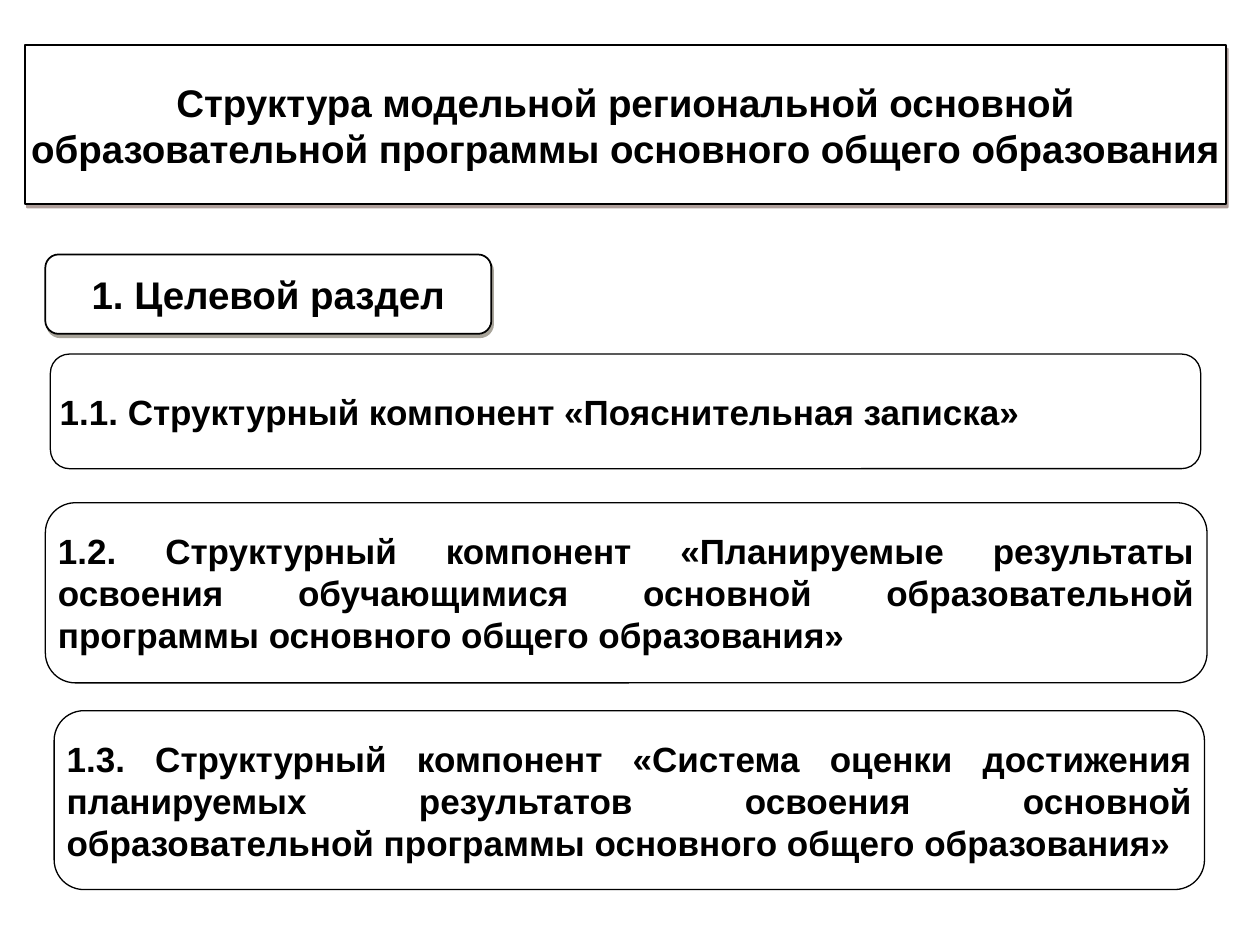
from lxml.etree import SubElement
from pptx import Presentation
from pptx.dml.color import RGBColor
from pptx.enum.shapes import MSO_SHAPE
from pptx.enum.text import MSO_ANCHOR, MSO_AUTO_SIZE, PP_ALIGN
from pptx.oxml import parse_xml
from pptx.oxml.ns import nsdecls, qn
from pptx.util import Inches, Pt

TITLE = ("Структура модельной региональной основной образовательной "
         "программы основного общего образования")
SECTION = "1. Целевой раздел"
# text, (left, top, width, height)
COMPONENTS = [
    ("1.1. Структурный компонент «Пояснительная записка»",
     (0.4, 2.81, 9.13, 0.91)),
    ("1.2. Структурный компонент «Планируемые результаты освоения "
     "обучающимися основной образовательной программы основного общего "
     "образования»", (0.36, 3.99, 9.22, 1.43)),
    ("1.3. Структурный компонент «Система оценки достижения планируемых "
     "результатов освоения основной образовательной программы основного "
     "общего образования»", (0.43, 5.64, 9.13, 1.42)),
]
HEADING = dict(size=22, align=PP_ALIGN.CENTER, line=1)


def color(value):
    return RGBColor.from_string(value)


def place(sp, box):
    sp.left, sp.top, sp.width, sp.height = map(Inches, box)


def add_shadow(sp, value):
    """Give the shape a half-transparent hard shadow, down and to the right."""
    sp.shadow.inherit = False
    effects = sp._element.spPr.find(qn("a:effectLst"))
    shadow = SubElement(effects, qn("a:outerShdw"), blurRad="0",
                        dist=str(Pt(2.2)), dir=str(63 * 60000),
                        algn="ctr", rotWithShape="0")
    clr = SubElement(shadow, qn("a:srgbClr"), val=value)
    SubElement(clr, qn("a:alpha"), val="50000")


def format_box(sp, text, size=20, align=PP_ALIGN.JUSTIFY, line=0.75,
               shadow=None, side=0.03):
    sp.fill.solid()
    sp.fill.fore_color.rgb = color("FFFFFF")
    sp.line.color.rgb = color("000000")
    sp.line.width = Pt(line)
    if shadow:
        add_shadow(sp, shadow)
    else:
        sp.shadow.inherit = False
    tf = sp.text_frame
    tf.word_wrap = True
    tf.auto_size = MSO_AUTO_SIZE.NONE
    tf.vertical_anchor = MSO_ANCHOR.MIDDLE
    tf.margin_left = tf.margin_right = Inches(side)
    tf.margin_top = tf.margin_bottom = Inches(0.03)
    p = tf.paragraphs[0]
    p.alignment = align
    r = p.add_run()
    r.text = text
    r.font.name, r.font.size, r.font.bold = "Arial", Pt(size), True
    r.font.color.rgb = color("000000")


def add_box(s, text, box, **fmt):
    sp = s.shapes.add_shape(MSO_SHAPE.ROUNDED_RECTANGLE, *map(Inches, box))
    format_box(sp, text, **fmt)


prs = Presentation()
prs.slide_width, prs.slide_height = Inches(10), Inches(7.5)
s = prs.slides.add_slide(prs.slide_layouts[5])

title = s.shapes.title
place(title, (0.2, 0.36, 9.53, 1.26))
title._element.spPr.append(parse_xml(
    f'<a:prstGeom {nsdecls("a")} prst="roundRect"><a:avLst/></a:prstGeom>'))
format_box(title, TITLE, shadow="614038", **HEADING)

add_box(s, SECTION, (0.36, 2.02, 3.54, 0.63), shadow="524A37", side=0,
        **HEADING)
for text, box in COMPONENTS:
    add_box(s, text, box)

prs.save("out.pptx")
